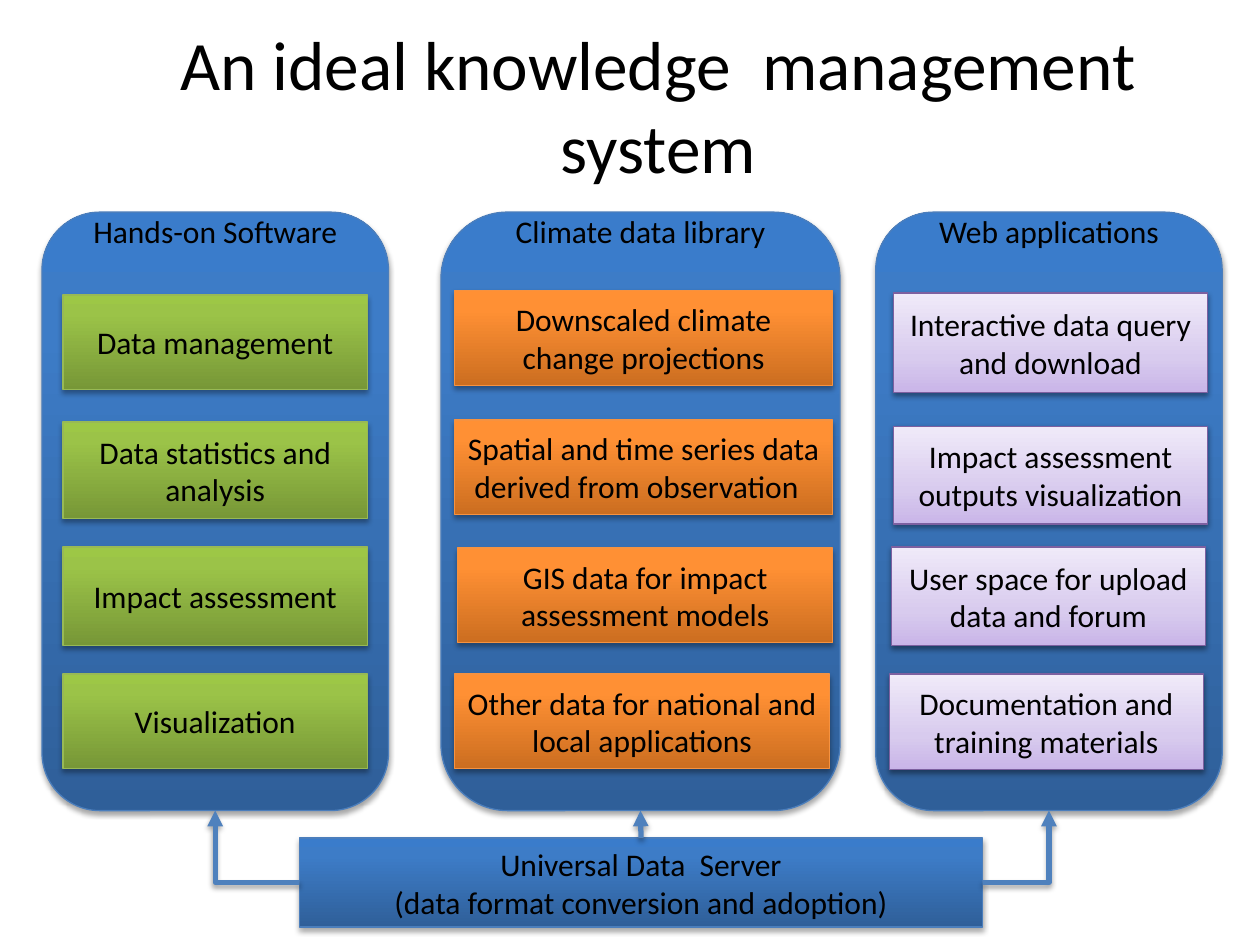
import pptx
import pptx.util
import pptx.dml.color
import pptx.enum.shapes
import pptx.enum.text
import pptx.oxml
import pptx.oxml.ns

Pt = pptx.util.Pt
Kind = pptx.enum.shapes.MSO_SHAPE
Link = pptx.enum.shapes.MSO_CONNECTOR
Anchor = pptx.enum.text.MSO_ANCHOR
Align = pptx.enum.text.PP_ALIGN
rgb = pptx.dml.color.RGBColor.from_string
NS = pptx.oxml.ns.nsdecls("a")

theme = {
    "font": "Calibri", "ink": "000000", "title": 39.6, "body": 18,
    "arrow": "4F81BD", "thick": 3, "thin": 0.75,
    "blue": ("4B7EBC", [(0, "2F5F99"), (80, "3D7CC7"), (100, "3A7CCB")], 35, 1.8),
    "green": ("98B955", [(0, "779737"), (80, "9BC348"), (100, "9DC746")], 35, 1.8),
    "orange": ("F69240", [(0, "CC6E20"), (80, "FF9034"), (100, "FF9136")], 35, 1.8),
    "lilac": ("7D60A0", [(0, "C9B5E8"), (35, "D8CBEE"), (100, "F0EAF9")], 38, 1.6),
}

deck = pptx.Presentation()
deck.slide_width = pptx.util.Inches(10)
deck.slide_height = pptx.util.Inches(7.5)
slide = deck.slides.add_slide(deck.slide_layouts[6])
col = deck.slide_width / 120
row = deck.slide_height / 90


def shade(item, alpha, dist):
    item._element.spPr.append(pptx.oxml.parse_xml(
        f'<a:effectLst {NS}><a:outerShdw blurRad="{Pt(3.1)}" dist="{Pt(dist)}" '
        f'dir="5400000" rotWithShape="0"><a:srgbClr val="000000">'
        f'<a:alpha val="{alpha * 1000}"/></a:srgbClr></a:outerShdw></a:effectLst>'))


def block(kind, x, y, w, h, look=None, text="", size=theme["body"], anchor=Anchor.MIDDLE):
    area = [round(n) for n in (x * col, y * row, w * col, h * row)]
    if look:
        item = slide.shapes.add_shape(kind, *area)
        edge, stops, alpha, dist = theme[look]
        item.line.color.rgb = rgb(edge)
        item.line.width = Pt(theme["thin"])
        marks = "".join(f'<a:gs pos="{at * 1000}"><a:srgbClr val="{hue}"/></a:gs>'
                        for at, hue in stops)
        item._element.spPr.find(pptx.oxml.ns.qn("a:prstGeom")).addnext(
            pptx.oxml.parse_xml(
                f'<a:gradFill {NS} rotWithShape="1"><a:gsLst>{marks}</a:gsLst>'
                f'<a:lin ang="16200000" scaled="0"/></a:gradFill>'))
        shade(item, alpha, dist)
    else:
        item = slide.shapes.add_textbox(*area)
    if text:
        frame = item.text_frame
        frame.word_wrap = True
        frame.vertical_anchor = anchor
        if anchor == Anchor.TOP:
            frame.margin_top = 0
        frame.text = text
        for para in frame.paragraphs:
            para.alignment = Align.CENTER
            para.font.name = theme["font"]
            para.font.size = Pt(size)
            para.font.color.rgb = rgb(theme["ink"])
    return item


block(None, 9, 2.4, 107.4, 15, text="An ideal knowledge  management system",
      size=theme["title"])

top, tall = 20.2, 57
groups = [
    ("Climate data library", Kind.FLOWCHART_ALTERNATE_PROCESS, 42, 38, "orange", [
        (43.3, 27.7, 36, 9, "Downscaled climate change projections"),
        (43.3, 40, 36, 9, "Spatial and time series data derived from observation  "),
        (43.6, 52.2, 35.7, 9, "GIS data for impact assessment models"),
        (43.3, 64.2, 35.7, 9, "Other data for national and local applications")]),
    ("Hands-on Software", Kind.ROUNDED_RECTANGLE, 4, 33, "green", [
        (6, 28.1, 29, 9, "Data management"),
        (6, 40.2, 29, 9.2, "Data statistics and analysis"),
        (6, 52.1, 29, 9.4, "Impact assessment"),
        (6, 64.2, 29, 9, "Visualization")]),
    ("Web applications", Kind.ROUNDED_RECTANGLE, 83.4, 33, "lilac", [
        (85.1, 27.9, 29.9, 9.5, "Interactive data query and download"),
        (85.1, 40.6, 29.9, 9.3, "Impact assessment outputs visualization"),
        (84.9, 52.1, 29.9, 9.4, "User space for upload data and forum"),
        (84.7, 64.2, 29.9, 9.1, "Documentation and training materials")]),
]
panels = []
for head, kind, x, w, look, cards in groups:
    panels.append(block(kind, x, top, w, tall, "blue"))
    block(None, x, top, w, 4, text=head, anchor=Anchor.TOP)
    for *area, text in cards:
        block(Kind.RECTANGLE, *area, look, text)

server = block(Kind.RECTANGLE, 28.5, 79.8, 65.1, 8.5, "blue",
               "Universal Data  Server\n (data format conversion and adoption) ")

mid = server.top + server.height // 2
right = server.left + server.width
starts = [(server.left + server.width // 2, server.top), (server.left, mid), (right, mid)]
for panel, start in zip(panels, starts):
    end = panel.left + panel.width // 2, panel.top + panel.height
    centre = panel is panels[0]
    arrow = slide.shapes.add_connector(Link.STRAIGHT if centre else Link.ELBOW, *start, *end)
    if centre:
        arrow.begin_connect(server, 0)
        arrow.end_connect(panel, 2)
    else:
        arrow._element.spPr.find(pptx.oxml.ns.qn("a:prstGeom")).set("prst", "bentConnector2")
    arrow.line.color.rgb = rgb(theme["arrow"])
    arrow.line.width = Pt(theme["thick"])
    arrow.line._get_or_add_ln().append(
        pptx.oxml.parse_xml(f'<a:tailEnd {NS} type="triangle"/>'))
    shade(arrow, 35, 1.8)

deck.save("out.pptx")
